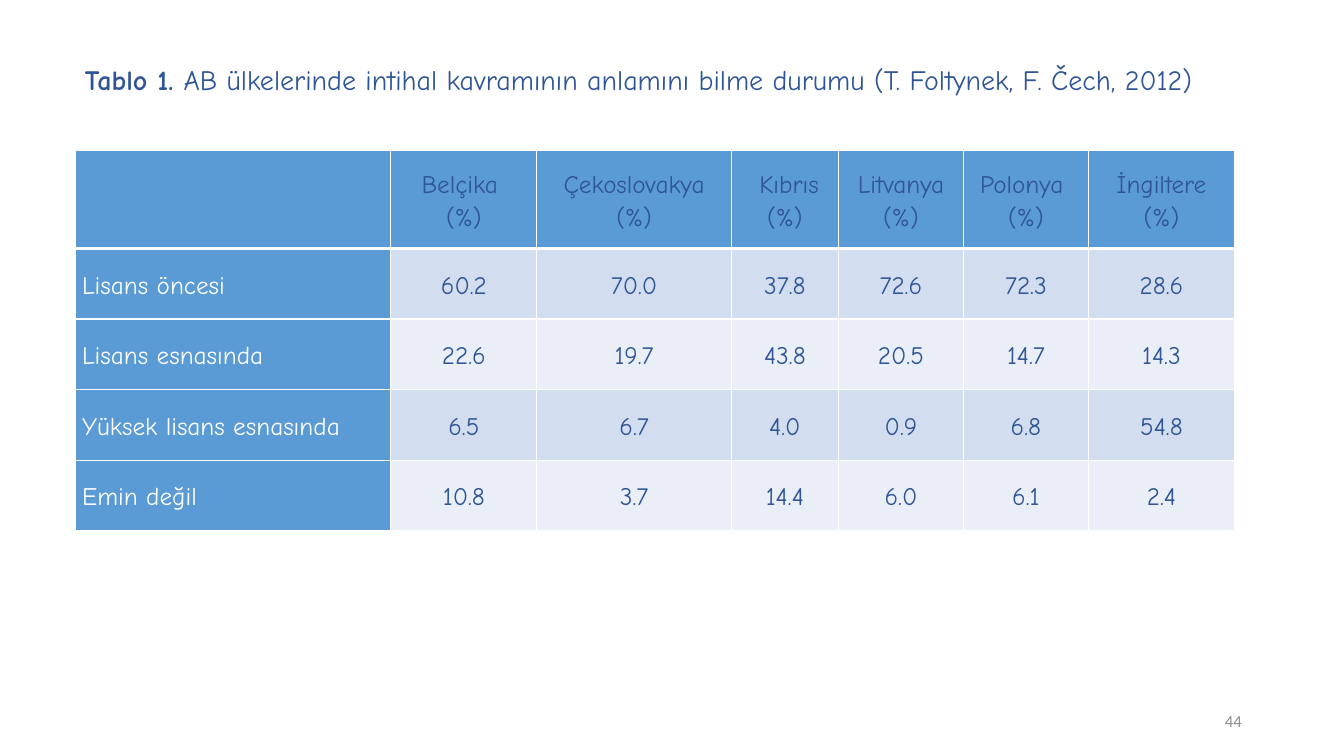
from dataclasses import dataclass

from lxml import etree
from pptx import Presentation
from pptx.dml.color import RGBColor
from pptx.enum.text import MSO_ANCHOR, PP_ALIGN
from pptx.oxml.ns import qn
from pptx.util import Cm, Pt

LEFT, CENTER, RIGHT = PP_ALIGN.LEFT, PP_ALIGN.CENTER, PP_ALIGN.RIGHT
MIDDLE = MSO_ANCHOR.MIDDLE


@dataclass(frozen=True)
class Theme:
    font: str = "Comic Neue"
    number_font: str = "Calibri"
    ink: str = "2F5597"
    white: str = "FFFFFF"
    gray: str = "8C8C8C"
    header: str = "5B9BD5"
    bands: tuple = ("D2DEEF", "EAEFF7")
    title_size: int = 20
    table_size: int = 18
    number_size: int = 12


THEME = Theme()
BLANK_LAYOUT = 6
COLUMN_WIDTHS = (7.96, 3.68, 4.9, 2.7, 3.15, 3.15, 3.68)
HEADER_HEIGHT, ROW_HEIGHT = 2.46, 1.78
COUNTRIES = ("Belçika ", "Çekoslovakya", " Kıbrıs", "Litvanya", "Polonya ", "İngiltere")
ANSWERS = (
    ("Lisans öncesi", "60.2", "70.0", "37.8", "72.6", "72.3", "28.6"),
    ("Lisans esnasında", "22.6", "19.7", "43.8", "20.5", "14.7", "14.3"),
    ("Yüksek lisans esnasında", "6.5", "6.7", "4.0", "0.9", "6.8", "54.8"),
    ("Emin değil", "10.8", "3.7", "14.4", "6.0", "6.1", "2.4"),
)


def set_attributes(target, values):
    for name, value in values.items():
        setattr(target, name, value)


def add_run(paragraph, text, size, color, font=THEME.font, bold=False):
    run = paragraph.add_run()
    run.text = text
    set_attributes(run.font, {"name": font, "size": Pt(size), "bold": bold})
    run.font.color.rgb = RGBColor.from_string(color)


def add_text_box(slide, left, top, width, height, align=LEFT, bottom=0.13):
    """Add a wrapping text box in centimetres and return its first paragraph."""
    box = slide.shapes.add_textbox(Cm(left), Cm(top), Cm(width), Cm(height))
    frame = box.text_frame
    set_attributes(frame, {"word_wrap": True, "vertical_anchor": MIDDLE,
                           "margin_bottom": Cm(bottom)})
    paragraph = frame.paragraphs[0]
    paragraph.alignment = align
    return paragraph


def add_borders(cell, bottom_width):
    properties = cell._tc.get_or_add_tcPr()
    widths = {"a:lnL": 1, "a:lnR": 1, "a:lnT": 1, "a:lnB": bottom_width}
    for tag, width in widths.items():
        line = etree.SubElement(properties, qn(tag), w=str(Pt(width)))
        fill = etree.SubElement(line, qn("a:solidFill"))
        etree.SubElement(fill, qn("a:srgbClr"), val=THEME.white)


def format_cell(cell, lines, fill, color, align, bottom_width):
    set_attributes(cell, {"vertical_anchor": MIDDLE,
                          "margin_left": Cm(0.18), "margin_right": Cm(0.18),
                          "margin_top": 0, "margin_bottom": 0})
    add_borders(cell, bottom_width)
    cell.fill.solid()
    cell.fill.fore_color.rgb = RGBColor.from_string(fill)
    frame = cell.text_frame
    for index, line in enumerate(lines):
        paragraph = frame.add_paragraph() if index else frame.paragraphs[0]
        set_attributes(paragraph, {"alignment": align, "line_spacing": 1.15})
        add_run(paragraph, line, THEME.table_size, color)


def add_answer_table(slide):
    row_heights = (HEADER_HEIGHT,) + (ROW_HEIGHT,) * len(ANSWERS)
    table = slide.shapes.add_table(
        len(row_heights), len(COLUMN_WIDTHS), Cm(1.89), Cm(3.8),
        Cm(sum(COLUMN_WIDTHS)), Cm(sum(row_heights))).table
    for column, width in zip(table.columns, COLUMN_WIDTHS):
        column.width = Cm(width)
    for row, height in zip(table.rows, row_heights):
        row.height = Cm(height)

    format_cell(table.cell(0, 0), (), THEME.header, THEME.ink, LEFT, 3)
    for column, country in enumerate(COUNTRIES, start=1):
        format_cell(table.cell(0, column), (country, "(%)"),
                    THEME.header, THEME.ink, CENTER, 3)
    for row, (answer, *percentages) in enumerate(ANSWERS, start=1):
        format_cell(table.cell(row, 0), (answer,), THEME.header, THEME.white, LEFT, 1)
        band = THEME.bands[(row - 1) % 2]
        for column, percentage in enumerate(percentages, start=1):
            format_cell(table.cell(row, column), (percentage,),
                        band, THEME.ink, CENTER, 1)


def add_title(slide):
    paragraph = add_text_box(slide, 1.89, 0.99, 30.23, 2.82, bottom=0.92)
    add_run(paragraph, "Tablo 1. ", THEME.title_size, THEME.ink, bold=True)
    add_run(paragraph, "AB ülkelerinde intihal kavramının anlamını bilme durumu "
            "(T. Foltynek, F. Čech, 2012)", THEME.title_size, THEME.ink)


def add_slide_number(slide):
    paragraph = add_text_box(slide, 23.93, 17.65, 7.62, 1.02, align=RIGHT)
    add_run(paragraph, "44", THEME.number_size, THEME.gray, THEME.number_font)


def main():
    presentation = Presentation()
    set_attributes(presentation, {"slide_width": Cm(33.87), "slide_height": Cm(19.05)})
    slide = presentation.slides.add_slide(presentation.slide_layouts[BLANK_LAYOUT])
    add_answer_table(slide)
    add_title(slide)
    add_slide_number(slide)
    presentation.save("out.pptx")


if __name__ == "__main__":
    main()
